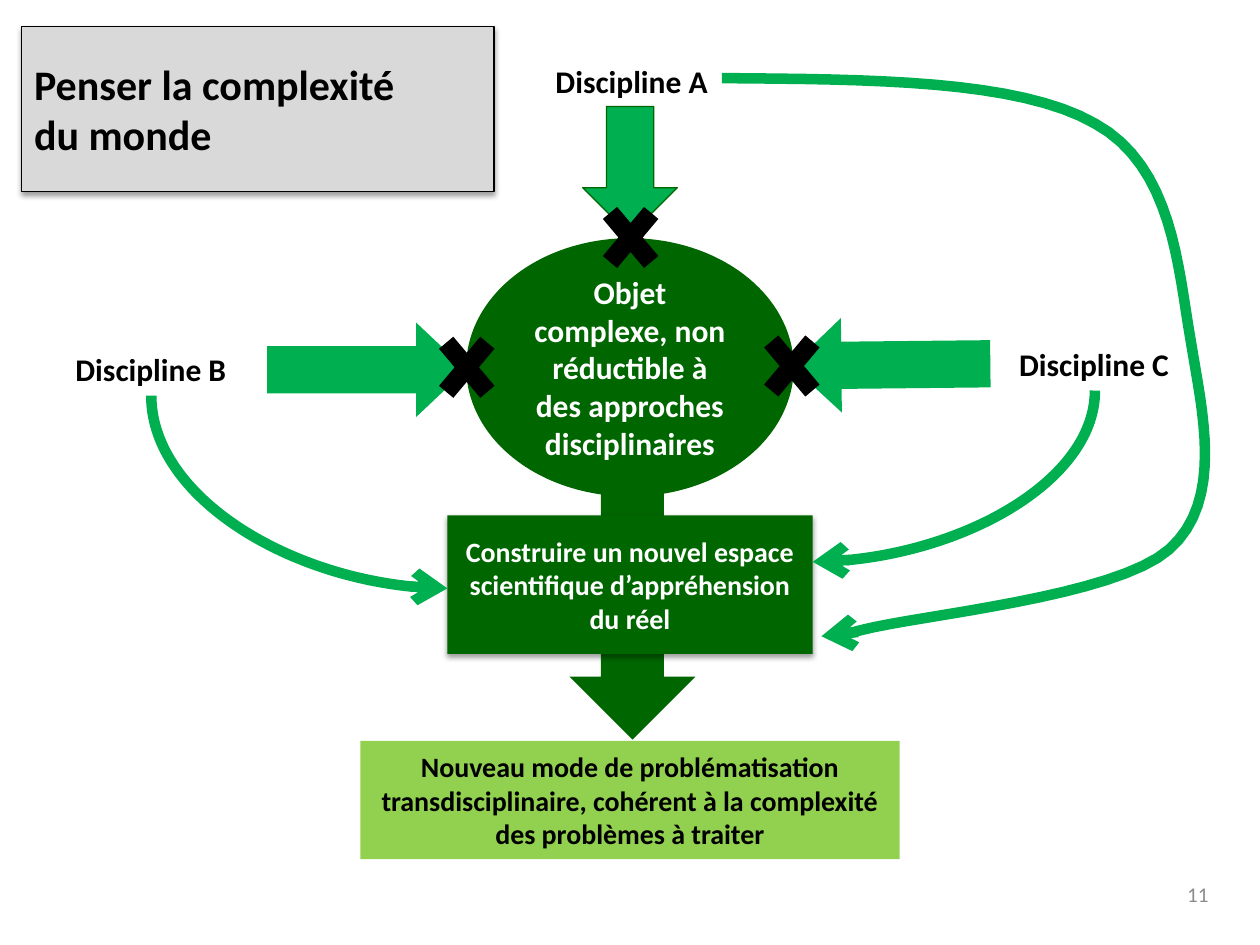
from dataclasses import dataclass

from lxml.etree import SubElement
from pptx import Presentation
from pptx.dml.color import RGBColor
from pptx.enum.shapes import MSO_CONNECTOR, MSO_SHAPE as Preset
from pptx.enum.text import MSO_ANCHOR as Anchor, MSO_AUTO_SIZE as AutoSize, PP_ALIGN as Align
from pptx.oxml import parse_xml
from pptx.oxml.ns import nsdecls, qn
from pptx.slide import Slide
from pptx.util import Inches, Pt

BLACK, WHITE = "000000", "FFFFFF"
DARK_GREEN, GREEN, LIME = "006600", "00B050", "92D050"
LIGHT_GRAY, GRAY = "D9D9D9", "8C8C8C"


def color(value):
    return RGBColor.from_string(value)


def bezier_points(start, segments, steps=16):
    for first, second, end in segments:
        for step in range(1, steps + 1):
            t = step / steps
            u = 1 - t
            yield tuple(
                u**3 * a + 3 * u * u * t * b + 3 * u * t * t * c + t**3 * d
                for a, b, c, d in zip(start, first, second, end)
            )
        start = end


@dataclass
class Diagram:
    slide: Slide
    font: str = "Calibri"
    curve_color: str = GREEN
    curve_width: float = 6

    def set_text(self, shape, text, size, ink, align, bold=True):
        frame = shape.text_frame
        frame.text = text
        for paragraph in frame.paragraphs:
            paragraph.alignment = align
            for run in paragraph.runs:
                run.font.name = self.font
                run.font.size = Pt(size)
                run.font.bold = bold
                run.font.color.rgb = color(ink)

    def paint(self, shape, fill, outline=None, shadow=False):
        shape.fill.solid()
        shape.fill.fore_color.rgb = color(fill)
        if outline:
            shape.line.color.rgb = color(outline)
            shape.line.width = Pt(0.75)
        else:
            shape.line.fill.background()
        shape.shadow.inherit = False
        if shadow:
            effects = shape.element.spPr.find(qn("a:effectLst"))
            outer = SubElement(effects, qn("a:outerShdw"), blurRad="40000", dist="20000",
                               dir="5400000", rotWithShape="0")
            shade = SubElement(outer, qn("a:srgbClr"), val=BLACK)
            SubElement(shade, qn("a:alpha"), val="38000")

    def title(self, text, left, top, width, height):
        title = self.slide.shapes.title
        title.left, title.top = Inches(left), Inches(top)
        title.width, title.height = Inches(width), Inches(height)
        rounded = parse_xml(f'<a:prstGeom {nsdecls("a")} prst="roundRect"><a:avLst/></a:prstGeom>')
        title.element.spPr.insert(1, rounded)
        self.paint(title, LIGHT_GRAY, BLACK, shadow=True)
        title.text_frame.auto_size = AutoSize.NONE
        title.text_frame.vertical_anchor = Anchor.MIDDLE
        self.set_text(title, text, 24, BLACK, Align.LEFT)

    def shape(self, preset, left, top, width, height, fill, outline=None,
              shadow=False, rotation=0, adjustments=()):
        shape = self.slide.shapes.add_shape(
            preset, Inches(left), Inches(top), Inches(width), Inches(height))
        self.paint(shape, fill, outline, shadow)
        shape.rotation = rotation
        for index, value in enumerate(adjustments):
            shape.adjustments[index] = value
        return shape

    def box(self, preset, text, size, ink, *place, **style):
        shape = self.shape(preset, *place, **style)
        shape.text_frame.word_wrap = True
        shape.text_frame.vertical_anchor = Anchor.MIDDLE
        self.set_text(shape, text, size, ink, Align.CENTER)

    def label(self, text, left, top, width):
        label = self.slide.shapes.add_textbox(
            Inches(left), Inches(top), Inches(width), Inches(0.4))
        label.text_frame.word_wrap = False
        label.text_frame.auto_size = AutoSize.SHAPE_TO_FIT_TEXT
        self.set_text(label, text, 18, BLACK, Align.LEFT)

    def page_number(self, text):
        number = self.slide.shapes.add_textbox(
            Inches(7.36), Inches(6.9), Inches(2.33), Inches(0.4))
        number.text_frame.word_wrap = True
        number.text_frame.vertical_anchor = Anchor.MIDDLE
        self.set_text(number, text, 12, GRAY, Align.RIGHT, bold=False)

    def arrow_line(self, shape):
        shape.line.color.rgb = color(self.curve_color)
        shape.line.width = Pt(self.curve_width)
        SubElement(shape.element.spPr.find(qn("a:ln")), qn("a:tailEnd"), type="arrow")

    def quarter_curve(self, start, end):
        middle_x, middle_y = (start[0] + end[0]) / 2, (start[1] + end[1]) / 2
        half_width = (end[1] - start[1]) / 2
        half_height = abs(end[0] - start[0]) / 2
        goes_right = end[0] > start[0]
        side = 1 if goes_right else -1
        connector = self.slide.shapes.add_connector(
            MSO_CONNECTOR.CURVE,
            Inches(middle_x + side * half_width), Inches(middle_y - half_height),
            Inches(middle_x - side * half_width), Inches(middle_y + half_height))
        properties = connector.element.spPr
        properties.find(qn("a:xfrm")).set("rot", "16200000" if goes_right else "5400000")
        properties.find(qn("a:prstGeom")).set("prst", "curvedConnector2")
        self.arrow_line(connector)
        SubElement(properties, qn("a:effectLst"))

    def free_curve(self, start, segments):
        builder = self.slide.shapes.build_freeform(Inches(start[0]), Inches(start[1]))
        points = [(Inches(x), Inches(y)) for x, y in bezier_points(start, segments)]
        builder.add_line_segments(points, close=False)
        curve = builder.convert_to_shape()
        curve.fill.background()
        curve.shadow.inherit = False
        self.arrow_line(curve)


def main():
    presentation = Presentation()
    presentation.slide_width, presentation.slide_height = Inches(10), Inches(7.5)
    diagram = Diagram(presentation.slides.add_slide(presentation.slide_layouts[5]))

    diagram.title("Penser la complexité\vdu monde", 0.17, 0.21, 3.75, 1.31)
    diagram.shape(Preset.DOWN_ARROW, 4.52, 3.59, 1, 2.28, DARK_GREEN)
    diagram.page_number("11")
    diagram.box(Preset.OVAL, "Objet complexe, non réductible à des approches disciplinaires",
                18, WHITE, 3.7, 1.89, 2.6, 2.05, DARK_GREEN)

    diagram.shape(Preset.RIGHT_ARROW, 4.49, 0.98, 1.02, 0.75, GREEN,
                  outline=DARK_GREEN, rotation=90)
    for left, top, rotation in [(2.12, 2.56, 0), (6.28, 2.52, 179.4)]:
        diagram.shape(Preset.RIGHT_ARROW, left, top, 1.58, 0.75, GREEN,
                      rotation=rotation, adjustments=(0.5, 0.53))
    for letter, left, top, width in [("A", 4.31, 0.44, 1.42), ("B", 0.5, 2.73, 1.41),
                                     ("C", 7.99, 2.69, 1.4)]:
        diagram.label(f"Discipline {letter}", left, top, width)
    for left, top in [(3.39, 2.54), (4.69, 1.51), (5.97, 2.53)]:
        diagram.shape(Preset.MATH_MULTIPLY, left, top, 0.63, 0.75, BLACK)

    diagram.box(Preset.RECTANGLE, "Construire un nouvel espace scientifique d’appréhension du réel",
                16, WHITE, 3.55, 4.09, 2.9, 1.1, DARK_GREEN, shadow=True)
    diagram.box(Preset.RECTANGLE,
                "Nouveau mode de problématisation transdisciplinaire, "
                "cohérent à la complexité des problèmes à traiter",
                16, BLACK, 2.86, 5.88, 4.28, 0.94, LIME)

    diagram.quarter_curve((8.69, 3.1), (6.45, 4.46))
    diagram.quarter_curve((1.2, 3.14), (3.55, 4.67))
    diagram.free_curve((5.73, 0.62), [
        ((6.9, 0.63), (8.08, 0.63), (8.69, 0.98)),
        ((9.31, 1.32), (9.35, 2.13), (9.45, 2.7)),
        ((9.54, 3.26), (9.72, 3.97), (9.28, 4.36)),
        ((8.85, 4.74), (7.3, 4.88), (6.84, 5)),
        ((6.38, 5.12), (6.51, 5.04), (6.52, 5.05)),
    ])
    presentation.save("out.pptx")


if __name__ == "__main__":
    main()
